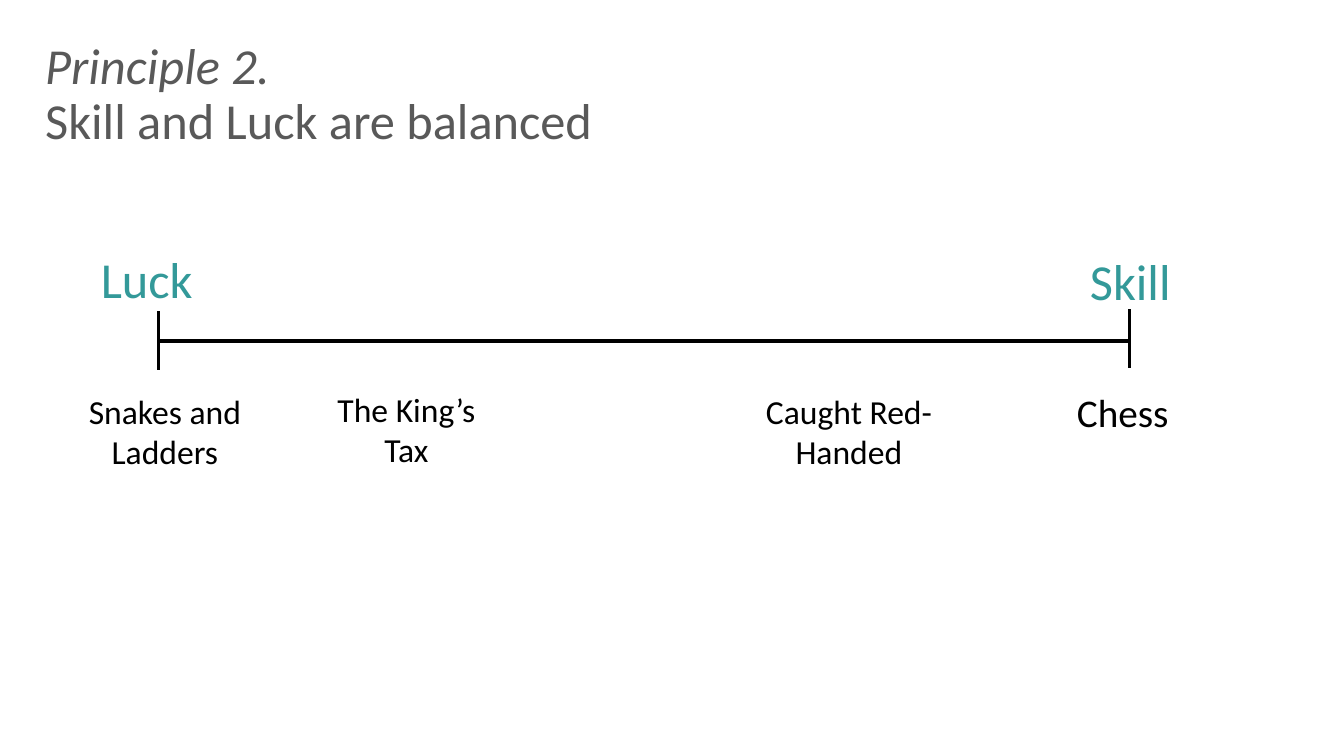
from pptx import Presentation
from pptx.dml.color import RGBColor as Rgb
from pptx.enum.shapes import MSO_CONNECTOR as Conn
from pptx.enum.text import MSO_ANCHOR as Anchor, MSO_AUTO_SIZE as Fit, PP_ALIGN as Align
from pptx.oxml.ns import qn
from pptx.util import Inches, Pt
from lxml import etree

FONT = "Calibri"
BLACK, GREY, TEAL = "000000", "595959", "339999"


def color(code):
    return Rgb.from_string(code)


def add_text(slide, text, box, size, code, align=Align.LEFT):
    shape = slide.shapes.add_textbox(*map(Inches, box))
    frame = shape.text_frame
    frame.word_wrap = True
    frame.vertical_anchor = Anchor.TOP
    para = frame.paragraphs[0]
    para.text = text
    para.alignment = align
    for run in para.runs:
        run.font.name = FONT
        run.font.size = Pt(size)
        run.font.color.rgb = color(code)
    return frame


def add_title(slide, text):
    frame = add_text(slide, text, (0.35, 0.36, 11.5, 1.45), 36, GREY)
    para = frame.paragraphs[0]
    para.line_spacing = 0.9
    para.runs[0].font.italic = True


def add_end(slide, text, left, top):
    frame = add_text(slide, text, (left, top, 1.59, 0.67), 36, TEAL)
    frame.margin_left = Inches(0.23)
    frame.margin_top = Inches(0.18)


def add_game(slide, text, box, size):
    frame = add_text(slide, text, box, size, BLACK, Align.CENTER)
    frame.auto_size = Fit.SHAPE_TO_FIT_TEXT


def add_line(slide, ends, width):
    line = slide.shapes.add_connector(Conn.STRAIGHT, *map(Inches, ends))
    line.line.color.rgb = color(BLACK)
    line.line.width = Pt(width)
    etree.SubElement(line._element.spPr, qn("a:effectLst"))


def main():
    deck = Presentation()
    deck.slide_width, deck.slide_height = Inches(13.33), Inches(7.5)
    slide = deck.slides.add_slide(deck.slide_layouts[6])

    add_title(slide, "Principle 2. \vSkill and Luck are balanced")

    # Scale with a tick and a name at each end
    low, high = 1.57, 11.2
    add_line(slide, (low, 3.38, high, 3.38), 3)
    for x, top in ((low, 3.09), (high, 3.07)):
        add_line(slide, (x, top, x, top + 0.58), 2.25)
    add_end(slide, "Luck", 0.77, 2.28)
    add_end(slide, "Skill", 10.58, 2.3)

    # Games along the scale
    games = (
        ("Snakes and Ladders", (0.64, 3.83, 1.99, 0.91), 24),
        ("The King’s Tax", (3.12, 3.81, 1.82, 0.91), 24),
        ("Caught Red- Handed", (7.26, 3.83, 2.32, 0.91), 24),
        ("Chess", (10.41, 3.8, 1.45, 0.57), 28),
    )
    for text, box, size in games:
        add_game(slide, text, box, size)

    deck.save("out.pptx")


if __name__ == "__main__":
    main()
